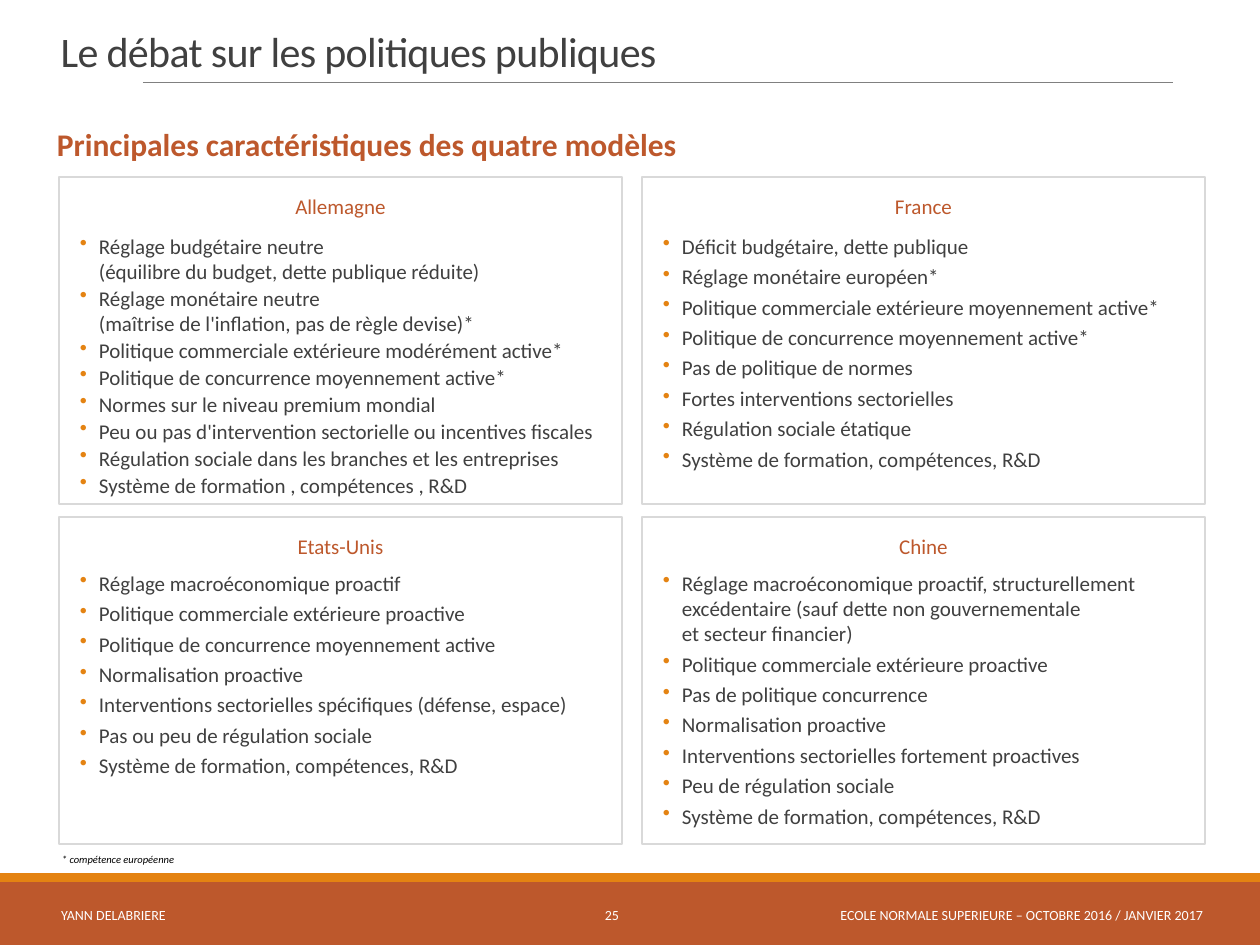
"""Build the slide on the four public policy models."""
from pptx import Presentation, util as u
from pptx.dml.color import RGBColor
from pptx.enum import shapes, text
from pptx.oxml.ns import qn
from lxml import etree

RUST, AMBER, DARK, WHITE = "BD582C", "E48312", "404040", "FFFFFF"
LEFT, MID, RIGHT = text.PP_ALIGN.LEFT, text.PP_ALIGN.CENTER, text.PP_ALIGN.RIGHT
TITLE = "Le débat sur les politiques publiques"
HEAD = "Principales caractéristiques des quatre modèles"
NOTE = "* compétence européenne"
FOOT = [
    ("YANN DELABRIERE", 48, 348, LEFT),
    ("25", 544, 136, MID),
    ("ECOLE NORMALE SUPERIEURE – OCTOBRE 2016 / JANVIER 2017", 803, 414, RIGHT),
]
MODELS = [
    ("Allemagne", 1, [
        "Réglage budgétaire neutre\n(équilibre du budget, dette publique réduite)",
        "Réglage monétaire neutre\n(maîtrise de l'inflation, pas de règle devise)*",
        "Politique commerciale extérieure modérément active*",
        "Politique de concurrence moyennement active*",
        "Normes sur le niveau premium mondial",
        "Peu ou pas d'intervention sectorielle ou incentives fiscales",
        "Régulation sociale dans les branches et les entreprises",
        "Système de formation , compétences , R&D",
    ]),
    ("France", 3, [
        "Déficit budgétaire, dette publique",
        "Réglage monétaire européen*",
        "Politique commerciale extérieure moyennement active*",
        "Politique de concurrence moyennement active*",
        "Pas de politique de normes",
        "Fortes interventions sectorielles",
        "Régulation sociale étatique",
        "Système de formation, compétences, R&D",
    ]),
    ("Etats-Unis", 3, [
        "Réglage macroéconomique proactif",
        "Politique commerciale extérieure proactive",
        "Politique de concurrence moyennement active",
        "Normalisation proactive",
        "Interventions sectorielles spécifiques (défense, espace)",
        "Pas ou peu de régulation sociale",
        "Système de formation, compétences, R&D",
    ]),
    ("Chine", 3, [
        "Réglage macroéconomique proactif, structurellement excédentaire "
        "(sauf dette non gouvernementale\net secteur financier)",
        "Politique commerciale extérieure proactive",
        "Pas de politique concurrence",
        "Normalisation proactive",
        "Interventions sectorielles fortement proactives",
        "Peu de régulation sociale",
        "Système de formation, compétences, R&D",
    ]),
]


def px(n):
    return u.Emu(round(n * 914400 / 126))


def rgb(code):
    return RGBColor.from_string(code)


def write(para, words, size, color, bold=False, italic=False):
    for i, line in enumerate(words.split("\n")):
        if i:
            para.add_line_break()
        run = para.add_run()
        run.text = line
        font = run.font
        font.name, font.size, font.color.rgb = "Calibri", u.Pt(size), rgb(color)
        font.bold, font.italic = bold, italic
    return run


def frame(slide, x, y, w, h, side=13, anchor=text.MSO_ANCHOR.TOP, wrap=True):
    box = slide.shapes.add_textbox(px(x), px(y), px(w), px(h)).text_frame
    box.word_wrap, box.vertical_anchor = wrap, anchor
    box.margin_left = box.margin_right = px(side)
    return box


def label(box, words, size, color, align=LEFT, **style):
    para = box.paragraphs[0]
    para.alignment = align
    write(para, words, size, color, **style)


def rect(slide, x, y, w, h, fill=None, line=None):
    shape = slide.shapes.add_shape(
        shapes.MSO_SHAPE.RECTANGLE, px(x), px(y), px(w), px(h))
    shape.shadow.inherit = False
    if fill:
        shape.fill.solid()
        shape.fill.fore_color.rgb = rgb(fill)
    else:
        shape.fill.background()
    if line:
        shape.line.color.rgb, shape.line.width = rgb(line), u.Pt(1)
    else:
        shape.line.fill.background()


def bullet(para):
    props = para._p.get_or_add_pPr()
    props.set("marL", str(px(40)))
    props.set("indent", str(-px(19)))
    tint = etree.SubElement(props, qn("a:buClr"))
    etree.SubElement(tint, qn("a:srgbClr")).set("val", AMBER)
    etree.SubElement(props, qn("a:buChar")).set("char", "•")


def points(box, items, gap):
    for i, item in enumerate(items):
        para = box.add_paragraph() if i else box.paragraphs[0]
        bullet(para)
        if i:
            para.space_before = u.Pt(gap)
        write(para, item, 12, DARK)


def title(slide):
    shape = slide.shapes.title
    shape.left, shape.top, shape.width, shape.height = map(px, (48, 1, 1170, 81))
    box = shape.text_frame
    box.auto_size = text.MSO_AUTO_SIZE.NONE
    box.vertical_anchor = text.MSO_ANCHOR.BOTTOM
    para = box.paragraphs[0]
    para.alignment, para.line_spacing = LEFT, 0.85
    write(para, TITLE, 24, DARK)._r.get_or_add_rPr().set("spc", "-40")


def main():
    deck = Presentation()
    deck.slide_width, deck.slide_height = px(1260), px(945)
    slide = deck.slides.add_slide(deck.slide_layouts[5])
    rect(slide, 0, 882, 1260, 63, RUST)
    rect(slide, 0, 873, 1260, 9, AMBER)
    rule = slide.shapes.add_connector(
        shapes.MSO_CONNECTOR.STRAIGHT, px(143), px(82), px(1173), px(82))
    rule.line.color.rgb, rule.line.width = rgb("808080"), u.Pt(0.5)
    etree.SubElement(rule._element.spPr, qn("a:effectLst"))
    title(slide)
    label(frame(slide, 57, 119, 1149, 55, 0), HEAD, 18, RUST, bold=True)
    for i, (name, gap, items) in enumerate(MODELS):
        row, col = divmod(i, 2)
        x, y = 59 + 583 * col, 177 + 340 * row
        rect(slide, x, y, 563, 327, line="D9D9D9")
        label(frame(slide, x + 213, y + 10, 137, 37, wrap=False),
              name, 12, RUST, MID)
        points(frame(slide, x, y + 50 - 3 * row, 580, 199, 0), items, gap)
    label(frame(slide, 48, 847, 140, 25, wrap=False), NOTE, 6, "000000", MID,
          italic=True)
    for words, x, w, align in FOOT:
        label(frame(slide, x, 890, w, 50, anchor=text.MSO_ANCHOR.MIDDLE),
              words, 8, WHITE, align)
    deck.save("out.pptx")


if __name__ == "__main__":
    main()
